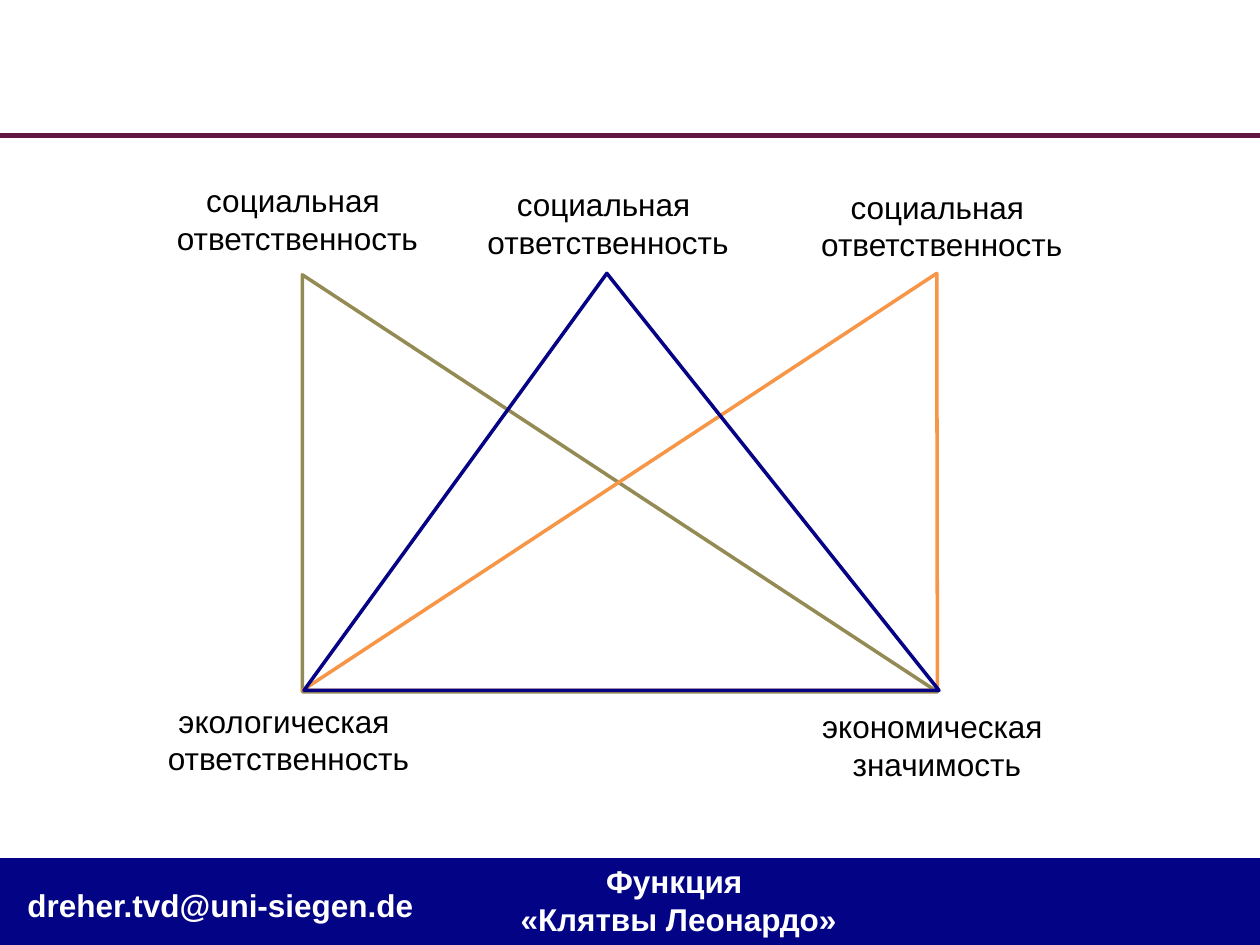
import pptx
import pptx.util
from pptx.dml.color import RGBColor
from pptx.enum.shapes import MSO_CONNECTOR, MSO_SHAPE
from pptx.enum.text import MSO_AUTO_SIZE, PP_ALIGN
from pptx.oxml import parse_xml
from pptx.oxml.ns import nsdecls

Pt = pptx.util.Pt

WHITE = RGBColor(0xFF, 0xFF, 0xFF)
BLACK = RGBColor(0x00, 0x00, 0x00)
BAND_BLUE = RGBColor(0x03, 0x03, 0x85)
RULE_PLUM = RGBColor(0x61, 0x15, 0x43)
OLIVE = RGBColor(0x94, 0x8A, 0x54)
ORANGE = RGBColor(0xF7, 0x96, 0x46)
NAVY = RGBColor(0x05, 0x02, 0x85)

SLIDE_WIDTH, SLIDE_HEIGHT = 720, 540
BAND_TOP = 490.3
RULE_TOP = 77.6
TRIANGLE_SIZE = (362.9, 238.3)

SOCIAL = ("социальная ", "ответственность")
TRIANGLES = [
    (172.8, 157, 0, OLIVE),
    (172.8, 156.2, 0.999, ORANGE),
    (173.7, 156.2, 0.477, NAVY),
]
LABELS = [
    (SOCIAL, 92.9, 100.1, 154.1),
    (SOCIAL, 270.4, 102.2, 154.1),
    (SOCIAL, 461.1, 103.7, 154.1),
    (("экологическая ", "ответственность"), 87.8, 397.4, 154.1),
    (("экономическая ", "значимость"), 460.1, 400.3, 150.5),
]
FOOTER = [
    (("dreher.tvd@uni-siegen.de",), 8.6, 502.6, 236.9, PP_ALIGN.LEFT),
    (("Функция ", "«Клятвы Леонардо»"), 290.2, 488.9, 195.1, PP_ALIGN.CENTER),
]


def add_text(slide, lines, left, top, width, alignment=PP_ALIGN.CENTER, color=BLACK, bold=False):
    height = 7.2 + 21.9 * len(lines)
    shape = slide.shapes.add_textbox(Pt(left), Pt(top), Pt(width), Pt(height))
    frame = shape.text_frame
    frame.word_wrap = False
    frame.auto_size = MSO_AUTO_SIZE.SHAPE_TO_FIT_TEXT
    for index, line in enumerate(lines):
        paragraph = frame.add_paragraph() if index else frame.paragraphs[0]
        paragraph.alignment = alignment
        run = paragraph.add_run()
        run.text = line
        run.font.name = "Arial"
        run.font.size = Pt(18)
        run.font.bold = bold
        run.font.color.rgb = color


def add_triangle(slide, left, top, apex, color):
    width, height = TRIANGLE_SIZE
    shape = slide.shapes.add_shape(
        MSO_SHAPE.ISOSCELES_TRIANGLE, Pt(left), Pt(top), Pt(width), Pt(height))
    shape.adjustments[0] = apex
    shape.shadow.inherit = False
    shape.fill.background()
    shape.line.color.rgb = color
    shape.line.width = Pt(2)


def add_frame(slide):
    band = slide.shapes.add_shape(
        MSO_SHAPE.RECTANGLE, 0, Pt(BAND_TOP), Pt(SLIDE_WIDTH), Pt(SLIDE_HEIGHT - BAND_TOP))
    band.shadow.inherit = False
    band.fill.solid()
    band.fill.fore_color.rgb = BAND_BLUE
    band.line.fill.background()

    rule = slide.shapes.add_connector(
        MSO_CONNECTOR.STRAIGHT, 0, Pt(RULE_TOP), Pt(SLIDE_WIDTH), Pt(RULE_TOP))
    rule.line.color.rgb = RULE_PLUM
    rule.line.width = Pt(3)
    rule._element.spPr.append(parse_xml(f"<a:effectLst {nsdecls('a')}/>"))


def main():
    presentation = pptx.Presentation()
    presentation.slide_width = Pt(SLIDE_WIDTH)
    presentation.slide_height = Pt(SLIDE_HEIGHT)
    slide = presentation.slides.add_slide(presentation.slide_layouts[6])
    slide.background.fill.solid()
    slide.background.fill.fore_color.rgb = WHITE

    add_frame(slide)
    for lines, left, top, width, alignment in FOOTER:
        add_text(slide, lines, left, top, width, alignment, WHITE, True)
    for triangle in TRIANGLES:
        add_triangle(slide, *triangle)
    for label in LABELS:
        add_text(slide, *label)

    presentation.save("out.pptx")


if __name__ == "__main__":
    main()
